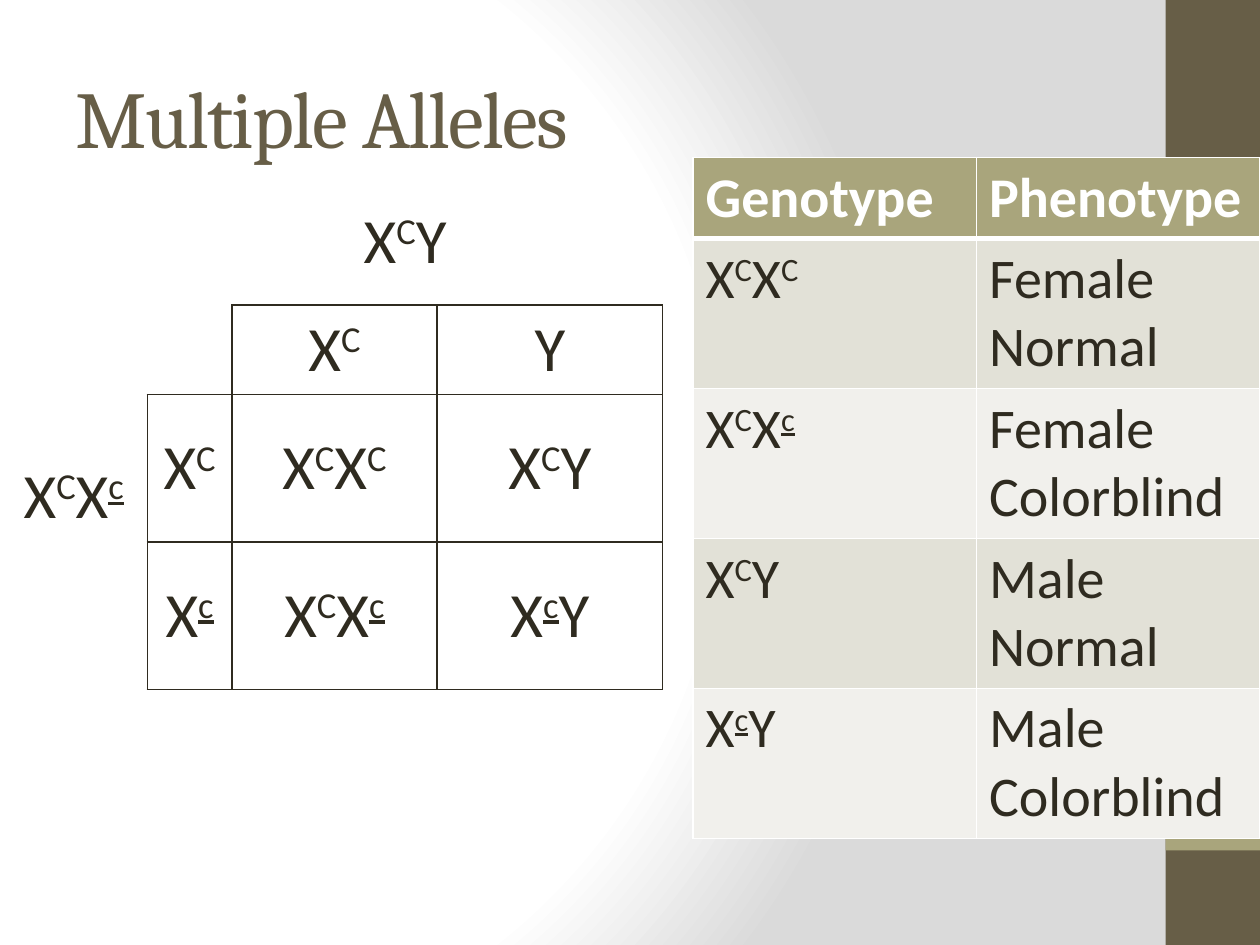
from pptx import Presentation
from pptx.dml.color import RGBColor
from pptx.enum.shapes import MSO_SHAPE
from pptx.enum.text import MSO_ANCHOR, PP_ALIGN
from pptx.oxml import parse_xml
from pptx.oxml.ns import nsdecls
from pptx.util import Inches, Pt

RECT = MSO_SHAPE.RECTANGLE
MIDDLE, TOP = MSO_ANCHOR.MIDDLE, MSO_ANCHOR.TOP
CENTER, LEFT = PP_ALIGN.CENTER, PP_ALIGN.LEFT
WIDE, HIGH = 10, 7.5
PLAIN = "{2D5ABB26-0587-4C30-8999-92F81FD0307C}"
COLORS = {
    "ink": "2F2B20", "brown": "675E47", "olive": "A9A57C", "white": "FFFFFF",
    "gray": "DADADA", "dark": "E2E1D7", "light": "F1F0EC",
}
CROSS = [
    ["", "XCY", "", ""],
    ["XCXc", "", "XC", "Y"],
    ["", "XC", "XCXC", "XCY"],
    ["", "Xc", "XCXc", "XcY"],
]
TRAITS = [
    ["Genotype", "Phenotype"],
    ["XCXC", "Female Normal"],
    ["XCXc", "Female Colorblind"],
    ["XCY", "Male Normal"],
    ["XcY", "Male Colorblind"],
]


def color(name):
    """Return a named colour."""
    return RGBColor.from_string(COLORS[name])


def style(font, name, size, tint, bold=False):
    """Set the look of a font."""
    font.name, font.size, font.bold = name, Pt(size), bold
    font.color.rgb = color(tint)


def backdrop(slide):
    """Give the slide a round gradient."""
    stops = "".join(
        f'<a:gs pos="{pos}000"><a:srgbClr val="{COLORS[tint]}"/></a:gs>'
        for pos, tint in ((0, "white"), (75, "white"), (100, "gray")))
    slide.element.cSld.insert(0, parse_xml(
        f'<p:bg {nsdecls("p", "a")}><p:bgPr><a:gradFill rotWithShape="1">'
        f'<a:gsLst>{stops}</a:gsLst><a:path path="circle">'
        '<a:fillToRect l="20000" t="50000" r="100000" b="50000"/></a:path>'
        '</a:gradFill><a:effectLst/></p:bgPr></p:bg>'))


def band(slide, top, high, tint):
    """Draw a block of the right-hand stripe."""
    wide = 0.075 * WIDE
    box = slide.shapes.add_shape(
        RECT, *map(Inches, (WIDE - wide, top * HIGH, wide, high * HIGH)))
    box.shadow.inherit = False
    box.fill.solid()
    box.fill.fore_color.rgb = color(tint)
    box.line.fill.background()


def heading(slide, text):
    """Fill and place the title."""
    title = slide.shapes.title
    title.left, title.top, title.width, title.height = map(
        Inches, (0.5, 0.3, 8.33, 1.25))
    title.text_frame.text = text
    title.text_frame.vertical_anchor = MIDDLE
    para = title.text_frame.paragraphs[0]
    para.alignment = LEFT
    style(para.font, "Cambria", 46, "brown")
    para.runs[0].font._element.set("spc", "-100")


def write(cell, text, size, tint="ink", align=LEFT, anchor=TOP, bold=False):
    """Write words, or a genotype with raised alleles."""
    cell.vertical_anchor = anchor
    para = cell.text_frame.paragraphs[0]
    para.alignment = align
    style(para.font, "Calibri", size, tint, bold)
    gene = set(text) <= set("XYCc")
    for part in text if gene else [text]:
        run = para.add_run()
        run.text = part
        if part in ("C", "c"):
            run.font._element.set("baseline", "30000")
            run.font.underline = part == "c"


def edge(cell, sides, tint):
    """Draw cell borders from a map of side to width."""
    props = cell._tc.get_or_add_tcPr()
    for side, width in sides.items():
        props.append(parse_xml(
            f'<a:ln{side} {nsdecls("a")} w="{Pt(width)}"><a:solidFill>'
            f'<a:srgbClr val="{COLORS[tint]}"/></a:solidFill></a:ln{side}>'))


def grid(slide, left, top, cols, rows):
    """Add a table without a style."""
    table = slide.shapes.add_table(len(rows), len(cols), *map(
        Inches, (left, top, sum(cols), sum(rows)))).table
    table.first_row = table.horz_banding = False
    table._tbl.tblPr[0].text = PLAIN
    for col, wide in zip(table.columns, cols):
        col.width = Inches(wide)
    for row, high in zip(table.rows, rows):
        row.height = Inches(high)
    return table


def cross(slide):
    """Build the Punnett square."""
    table = grid(slide, 0, 1.42, [1.17, 0.67, 1.63, 1.79],
                 [1, 0.71, 1.17, 1.17])
    table.cell(0, 1).merge(table.cell(0, 3))
    table.cell(1, 0).merge(table.cell(3, 0))
    for r, row in enumerate(CROSS):
        for c, text in enumerate(row):
            cell = table.cell(r, c)
            if r and c:
                sides = "RB" if r == c == 1 else "LRTB"
                edge(cell, dict.fromkeys(sides, 1), "ink")
            if text:
                write(cell, text, 36, align=CENTER, anchor=MIDDLE)


def traits(slide):
    """Build the table of genotypes and phenotypes."""
    table = grid(slide, 5.5, 1.25, [2.25] * 2, [0.63] + [1.19] * 4)
    for r, row in enumerate(TRAITS):
        head = r == 0
        fill = "olive" if head else "dark" if r % 2 else "light"
        for c, text in enumerate(row):
            cell = table.cell(r, c)
            edge(cell, {"L": 1, "R": 1, "T": 3 if r == 1 else 1,
                        "B": 3 if head else 1}, "white")
            cell.fill.solid()
            cell.fill.fore_color.rgb = color(fill)
            write(cell, text, 32, "white" if head else "ink", bold=head)


def main():
    """Build and save the slide."""
    deck = Presentation()
    deck.slide_width, deck.slide_height = Inches(WIDE), Inches(HIGH)
    slide = deck.slides.add_slide(deck.slide_layouts[5])
    backdrop(slide)
    band(slide, 0, 1, "brown")
    band(slide, 0.8, 0.1, "olive")
    heading(slide, "Multiple Alleles")
    cross(slide)
    traits(slide)
    deck.save("out.pptx")


if __name__ == "__main__":
    main()
